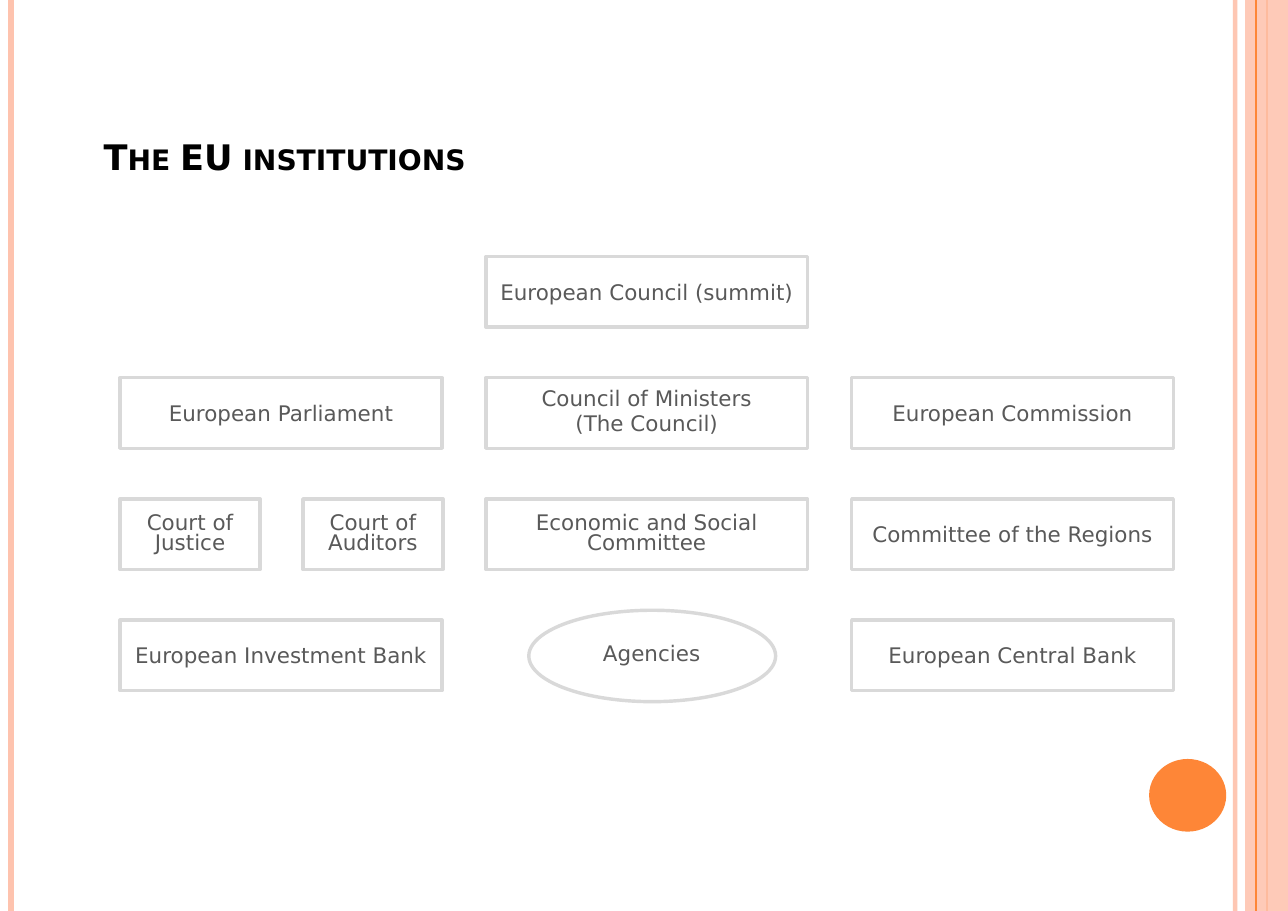
"""Builds the slide that charts the institutions of the European Union."""
from dataclasses import dataclass

from lxml import etree
from pptx import Presentation
from pptx import util as u
from pptx.dml.color import RGBColor
from pptx.enum import shapes, text
from pptx.oxml import ns


@dataclass(frozen=True)
class Theme:
    font: str = "DejaVu Sans"
    title: str = "000000"
    body: str = "595959"
    border: str = "D9D9D9"
    paper: str = "FFFFFF"
    peach: str = "FEC3AE"
    orange: str = "FE8637"
    title_size: float = 23
    body_size: float = 14
    border_width: float = 2.25


class Deck:
    def __init__(self, theme, width, height):
        self.theme = theme
        self.prs = Presentation()
        self.prs.slide_width = u.Inches(width)
        self.prs.slide_height = u.Inches(height)
        self.s = self.prs.slides.add_slide(self.prs.slide_layouts[5])

    def set_alpha(self, sp, percent):
        for clr in sp._element.spPr.iter(ns.qn("a:srgbClr")):
            etree.SubElement(clr, ns.qn("a:alpha"), val=str(percent * 1000))

    def set_font(self, font, size, color, bold=False):
        font.name, font.size, font.bold = self.theme.font, u.Pt(size), bold
        font.color.rgb = RGBColor.from_string(color)

    def set_frame(self, tf, anchor):
        tf.word_wrap = True
        tf.auto_size = text.MSO_AUTO_SIZE.NONE
        tf.vertical_anchor = anchor
        tf.margin_left = tf.margin_right = u.Inches(0.11)
        tf.margin_top = tf.margin_bottom = u.Inches(0.06)

    def title(self, words, *box):
        sp = self.s.shapes.title
        sp.left, sp.top, sp.width, sp.height = map(u.Inches, box)
        tf = sp.text_frame
        self.set_frame(tf, text.MSO_ANCHOR.BOTTOM)
        tf.text = words
        p = tf.paragraphs[0]
        p.alignment = text.PP_ALIGN.LEFT
        self.set_font(p.font, self.theme.title_size, self.theme.title, True)
        p.font._element.set("cap", "small")

    def rule(self, x, color, width, alpha=100):
        x = u.Inches(x)
        ln = self.s.shapes.add_connector(
            shapes.MSO_CONNECTOR.STRAIGHT, x, 0, x, self.prs.slide_height)
        ln.line.color.rgb = RGBColor.from_string(color)
        ln.line.width = u.Pt(width)
        if alpha < 100:
            self.set_alpha(ln, alpha)
        etree.SubElement(ln._element.spPr, ns.qn("a:effectLst"))

    def shape(self, kind, box, fill, border=None, alpha=100):
        sp = self.s.shapes.add_shape(kind, *map(u.Inches, box))
        sp.shadow.inherit = False
        sp.fill.solid()
        sp.fill.fore_color.rgb = RGBColor.from_string(fill)
        if alpha < 100:
            self.set_alpha(sp, alpha)
        if border:
            sp.line.color.rgb = RGBColor.from_string(border)
            sp.line.width = u.Pt(self.theme.border_width)
        else:
            sp.line.fill.background()
        return sp

    def set_text(self, sp, words, spacing=1.0):
        tf = sp.text_frame
        self.set_frame(tf, text.MSO_ANCHOR.MIDDLE)
        tf.text = words
        for p in tf.paragraphs:
            p.alignment = text.PP_ALIGN.CENTER
            p.line_spacing = spacing
            p.space_before = u.Pt(0.2 * self.theme.body_size)
            self.set_font(p.font, self.theme.body_size, self.theme.body)

    def box(self, words, *place, spacing=1.0):
        sp = self.shape(shapes.MSO_SHAPE.RECTANGLE, place, self.theme.paper, self.theme.border)
        self.set_text(sp, words, spacing)

    def label(self, words, *place):
        self.set_text(self.s.shapes.add_textbox(*map(u.Inches, place)), words)


LEFT, TOP, COLUMN, ROW = 1.09, 2.33, 1.66, 1.1
HALF, FULL, HEIGHT = 1.27, 2.92, 0.64
TIGHT = 0.8

INSTITUTIONS = [
    ("European Council (summit)", 2, 0, FULL, 1.0),
    ("European Parliament", 0, 1, FULL, 1.0),
    ("Council of Ministers\n(The Council)", 2, 1, FULL, TIGHT),
    ("European Commission", 4, 1, FULL, 1.0),
    ("Court of Justice", 0, 2, HALF, TIGHT),
    ("Court of Auditors", 1, 2, HALF, TIGHT),
    ("Economic and Social Committee", 2, 2, FULL, TIGHT),
    ("Committee of the Regions", 4, 2, FULL, 1.0),
    ("European Investment Bank", 0, 3, FULL, 1.0),
    ("European Central Bank", 4, 3, FULL, 1.0),
]


def main():
    theme = Theme()
    d = Deck(theme, 11.69, 8.27)
    kinds = shapes.MSO_SHAPE

    d.rule(11.21, theme.peach, 3, 93)
    d.rule(0.1, theme.peach, 4.5)
    d.rule(11.5, theme.orange, 1.5)
    d.shape(kinds.RECTANGLE, (11.3, 0, 0.39, 8.27), theme.peach, alpha=87)
    d.rule(11.4, theme.orange, 0.75)
    d.shape(kinds.OVAL, (10.43, 6.89, 0.7, 0.66), theme.orange)

    d.title("The EU institutions", 0.83, 0.8, 10.09, 0.87)
    for words, column, row, width, spacing in INSTITUTIONS:
        d.box(words, LEFT + column * COLUMN, TOP + row * ROW, width, HEIGHT, spacing=spacing)
    d.shape(kinds.OVAL, (4.8, 5.54, 2.24, 0.83), theme.paper, theme.border)
    d.label("Agencies", 4.6, 5.7, 2.63, 0.46)

    d.prs.save("out.pptx")


if __name__ == "__main__":
    main()
